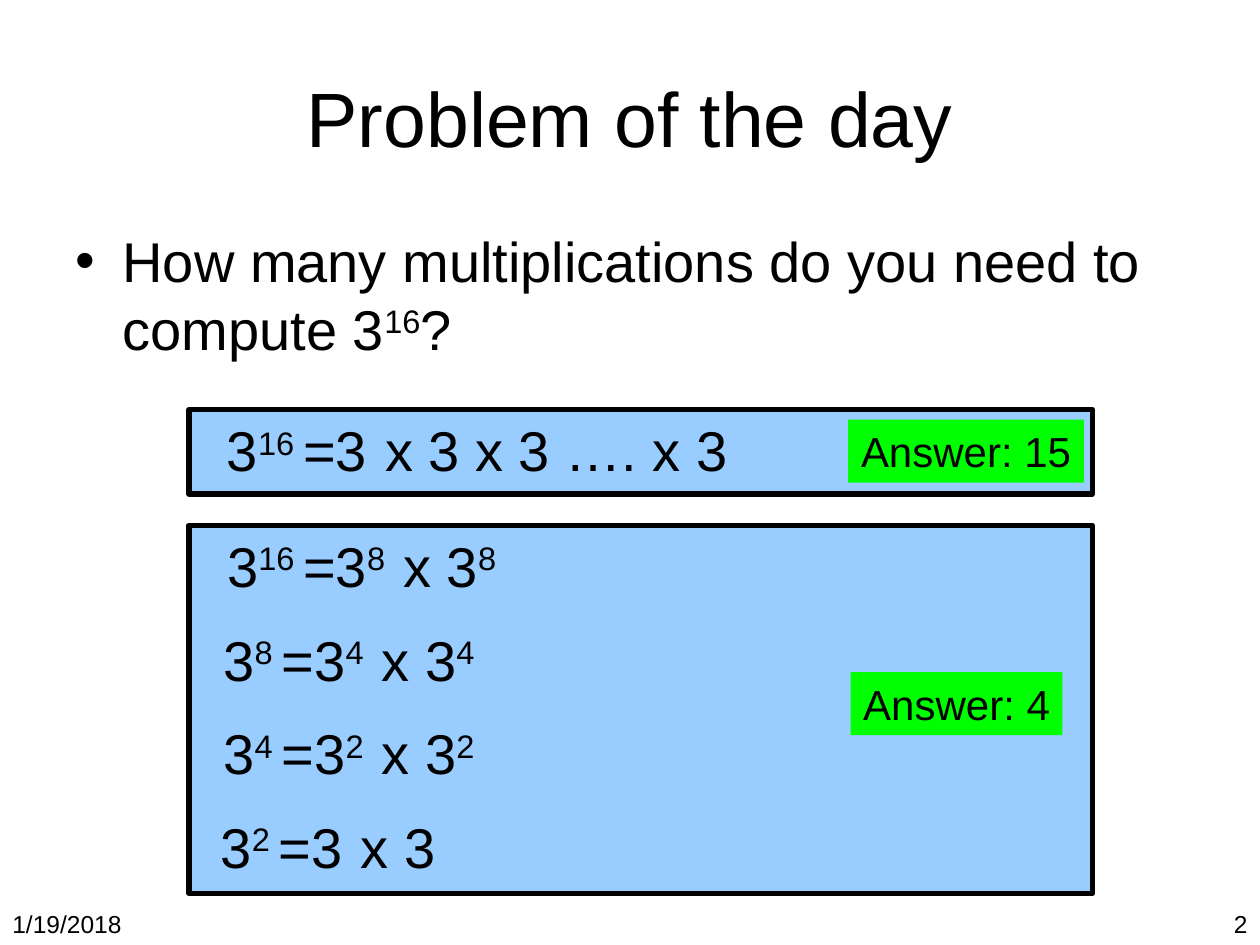
from lxml import etree
from pptx import Presentation, util as u
from pptx.dml.color import RGBColor
from pptx.enum import shapes, text
from pptx.oxml.ns import qn

LEFT, MID, RIGHT = text.PP_ALIGN.LEFT, text.PP_ALIGN.CENTER, text.PP_ALIGN.RIGHT
TOP, HALF = text.MSO_ANCHOR.TOP, text.MSO_ANCHOR.MIDDLE
BLUE, GREEN, BLACK = "99CCFF", "00FF00", "000000"


def paint(tint):
    """Turn a hex string into a colour."""
    return RGBColor.from_string(tint)


def apply(item, form):
    """Set each attribute named in a dict of format values."""
    for name, value in form.items():
        setattr(item, name, value)


def write(shape, words, size, align=LEFT, anchor=TOP, wrap=True):
    """Fill a shape with text in which every second part between bars is raised."""
    frame = shape.text_frame
    apply(frame, {"word_wrap": wrap, "vertical_anchor": anchor})
    para = frame.paragraphs[0]
    para.alignment = align
    for i, part in enumerate(words.split("|")):
        run = para.add_run()
        run.text = part
        apply(run.font, {"size": u.Pt(size), "name": "Arial"})
        run.font.color.rgb = paint(BLACK)
        if i % 2:
            run._r.get_or_add_rPr().set("baseline", "30000")
    return para


def label(slide, box, words, size, **form):
    """Add a text box with its place given in centimetres."""
    shape = slide.shapes.add_textbox(*map(u.Cm, box))
    return write(shape, words, size, **form)


def bullet(para):
    """Give a paragraph a round bullet with a hanging indent."""
    para.space_before = u.Pt(6.4)
    prop = para._p.get_or_add_pPr()
    prop.set("marL", str(u.Cm(0.95)))
    prop.set("indent", str(-u.Cm(0.95)))
    etree.SubElement(prop, qn("a:buFont")).set("typeface", "Arial")
    etree.SubElement(prop, qn("a:buChar")).set("char", "•")


def panel(slide, box, tint, edge=0):
    """Add a filled rectangle, with a black edge if a width is given."""
    kind = shapes.MSO_SHAPE.RECTANGLE
    shape = slide.shapes.add_shape(kind, *map(u.Cm, box))
    shape.shadow.inherit = False
    shape.fill.solid()
    shape.fill.fore_color.rgb = paint(tint)
    if edge:
        shape.line.color.rgb = paint(BLACK)
        shape.line.width = u.Pt(edge)
    else:
        shape.line.fill.background()
    return shape


def answer(slide, box, words):
    """Add a green answer tag."""
    write(panel(slide, box, GREEN), words, 24, align=MID, anchor=HALF, wrap=False)


def power(slide, left, top, width, words):
    """Add one line of the power expansion."""
    label(slide, (left, top, width, 1.6), words, 32, align=MID, wrap=False)


def main():
    """Build the slide and save it."""
    deck = Presentation()
    apply(deck, {"slide_width": u.Cm(25.4), "slide_height": u.Cm(19.05)})
    slide = deck.slides.add_slide(deck.slide_layouts[6])

    label(slide, (0, 18.21, 5.92, 0.84), "1/19/2018", 14)
    label(slide, (19.48, 18.21, 5.92, 0.84), "2", 14, align=RIGHT)
    label(slide, (1.27, 0.76, 22.86, 3.18), "Problem of the day", 44,
          align=MID, anchor=HALF)
    bullet(label(slide, (1.27, 4.45, 22.86, 12.57),
                 "How many multiplications do you need to compute 3|16|?", 32))

    panel(slide, (3.81, 10.59, 18.21, 7.42), BLUE, 3)
    steps = [
        (4.19, 6.2, "3|16 |=3|8  |x 3|8"),
        (4.14, 5.79, "3|8 |=3|4  |x 3|4"),
        (4.14, 5.79, "3|4 |=3|2  |x 3|2"),
        (4.14, 4.95, "3|2 |=3|  |x 3"),
    ]
    for i, (left, width, words) in enumerate(steps):
        power(slide, left, 10.59 + 1.89 * i, width, words)

    panel(slide, (3.81, 8.26, 18.21, 1.7), BLUE, 3)
    power(slide, 4.24, 8.26, 10.77, "3|16 |=3|  |x 3 x 3 …. x 3")
    answer(slide, (17.1, 8.46, 4.75, 1.27), "Answer: 15")
    answer(slide, (17.15, 13.55, 4.27, 1.27), "Answer: 4")
    deck.save("out.pptx")


if __name__ == "__main__":
    main()
